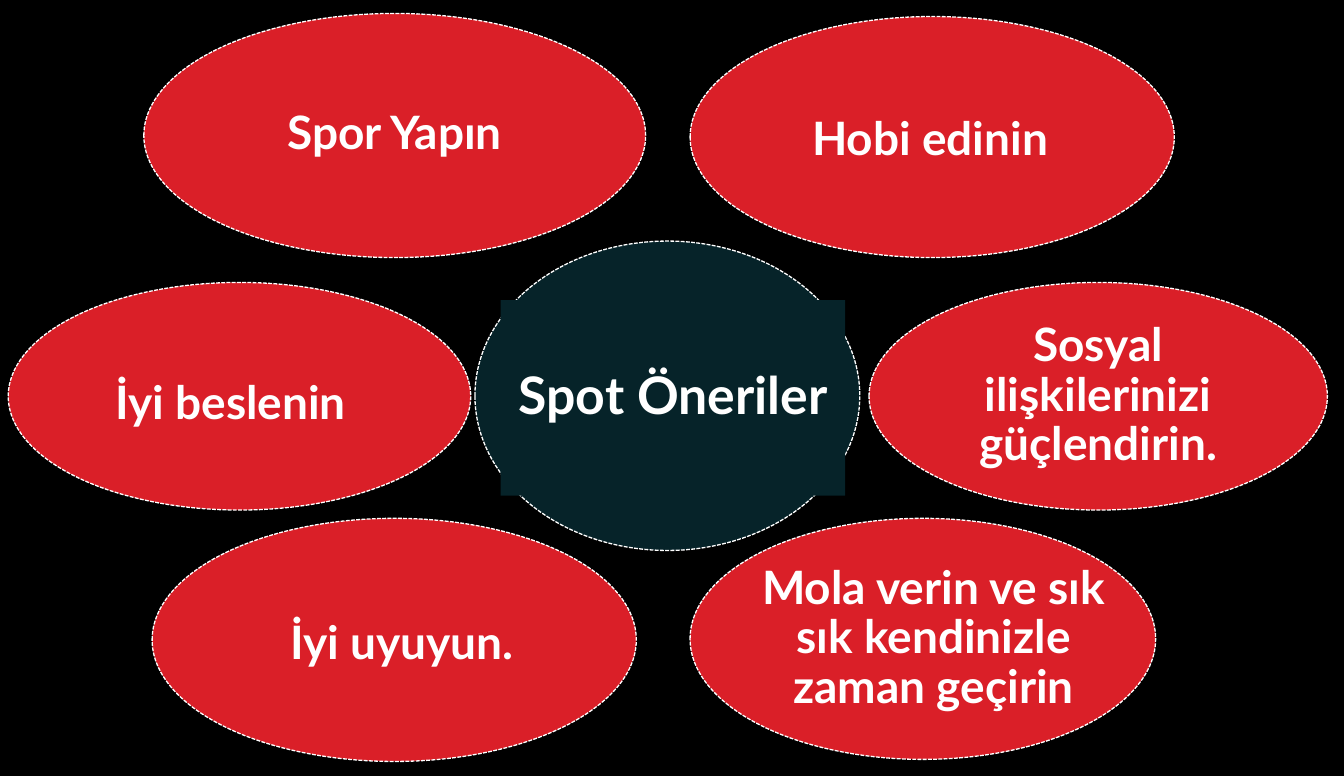
from pptx import Presentation
from pptx.dml.color import RGBColor
from pptx.enum.dml import MSO_LINE
from pptx.enum.shapes import MSO_SHAPE
from pptx.enum.text import MSO_ANCHOR, PP_ALIGN
from pptx.util import Inches, Pt

COLORS = {"back": "000000", "tip": "DA1F28", "hub": "062329", "text": "FFFFFF"}

# Each tip: text, oval box, text box (left, top, width, height)
TIPS = [
    ("Mola verin ve sık sık kendinizle zaman geçirin",
     (6.67, 5.01, 4.5, 2.33), (7.14, 5.35, 3.77, 1.65)),
    ("Spor Yapın", (1.39, 0.13, 4.85, 2.36), (2.1, 0.47, 3.43, 1.67)),
    ("Hobi edinin ", (6.67, 0.16, 4.68, 2.33), (7.39, 0.53, 3.31, 1.65)),
    ("İyi uyuyun.", (1.47, 5.01, 4.68, 2.35), (2.03, 5.32, 3.71, 1.83)),
    ("Sosyal ilişkilerinizi güçlendirin.",
     (8.4, 2.73, 4.43, 2.2), (9.05, 3.05, 3.13, 1.56)),
    ("İyi beslenin", (0.08, 2.73, 4.47, 2.2), (0.65, 3.13, 3.16, 1.56)),
]
HUB = ("Spot Öneriler", (4.59, 2.33, 3.72, 2.99), (4.84, 2.9, 3.33, 1.89))


def color(name):
    return RGBColor.from_string(COLORS[name])


def place(box):
    return [Inches(n) for n in box]


def add_oval(shapes, box, fill):
    oval = shapes.add_shape(MSO_SHAPE.OVAL, *place(box))
    oval.shadow.inherit = False
    oval.fill.solid()
    oval.fill.fore_color.rgb = color(fill)
    oval.line.color.rgb = color("text")
    oval.line.width = Pt(0.9)
    oval.line.dash_style = MSO_LINE.SQUARE_DOT


def add_label(shapes, text, box, size):
    label = shapes.add_textbox(*place(box))
    frame = label.text_frame
    frame.word_wrap = True
    frame.vertical_anchor = MSO_ANCHOR.MIDDLE
    frame.margin_left = frame.margin_right = Inches(0.03)
    frame.margin_top = frame.margin_bottom = Inches(0.03)
    para = frame.paragraphs[0]
    para.text = text
    para.alignment = PP_ALIGN.CENTER
    para.line_spacing = 0.9
    para.font.name = "Lato"
    para.font.size = Pt(size)
    para.font.bold = True
    para.font.color.rgb = color("text")
    return label


def add_bubble(slide, text, oval, box, fill, size):
    shapes = slide.shapes.add_group_shape().shapes
    add_oval(shapes, oval, fill)
    return add_label(shapes, text, box, size)


def main():
    deck = Presentation()
    deck.slide_width, deck.slide_height = Inches(12.99), Inches(7.5)
    slide = deck.slides.add_slide(deck.slide_layouts[6])
    slide.background.fill.solid()
    slide.background.fill.fore_color.rgb = color("back")

    # Tips around the centre
    for tip in TIPS:
        add_bubble(slide, *tip, "tip", 32)

    # Centre, with a filled label that covers part of the oval's edge
    label = add_bubble(slide, *HUB, "hub", 36)
    label.fill.solid()
    label.fill.fore_color.rgb = color("hub")

    deck.save("out.pptx")


if __name__ == "__main__":
    main()
